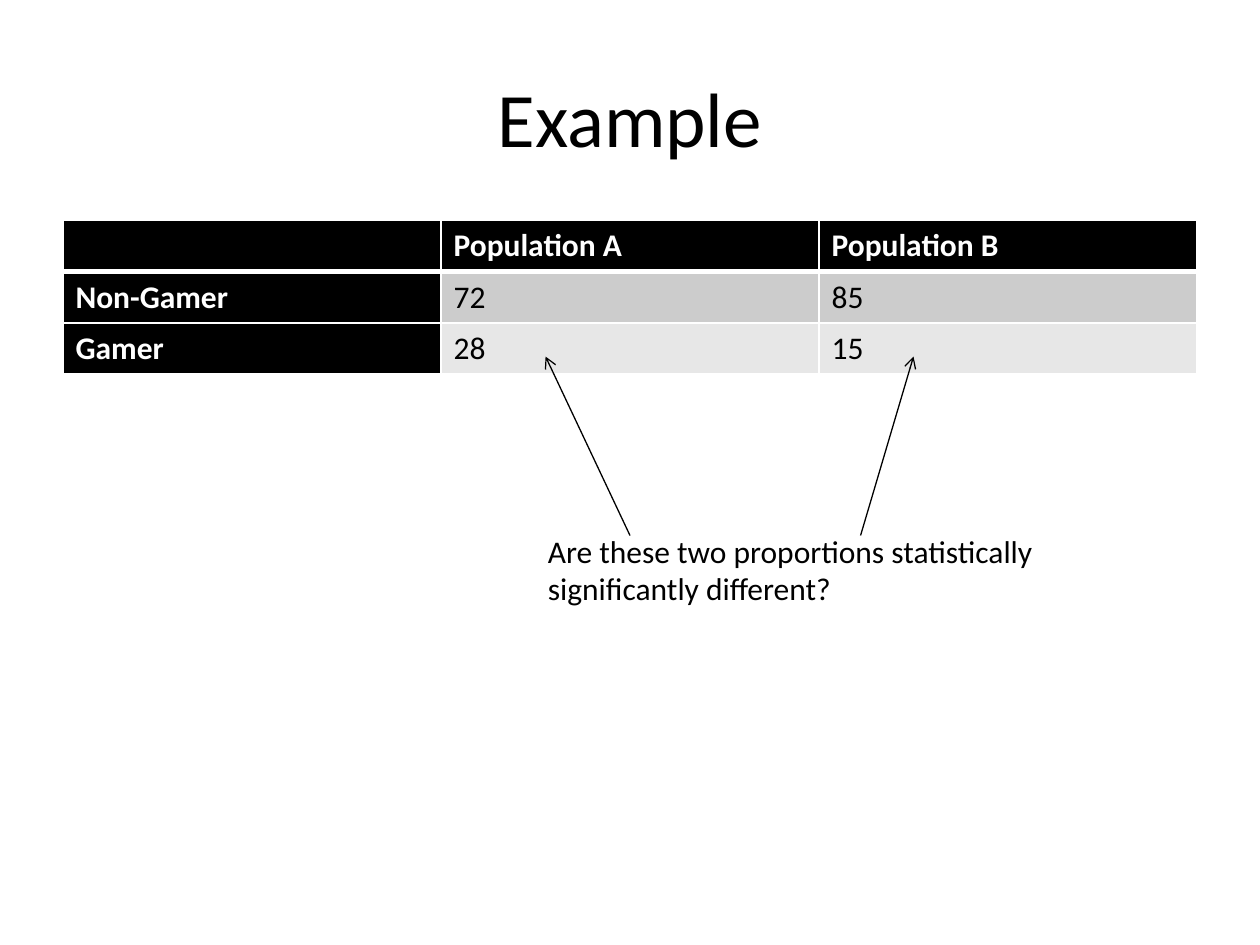
from lxml import etree
from pptx import Presentation
from pptx import util as u
from pptx.dml.color import RGBColor
from pptx.enum import shapes, text
from pptx.oxml import ns

BLACK = RGBColor(0x00, 0x00, 0x00)
WHITE = RGBColor(0xFF, 0xFF, 0xFF)
BAND_DARK = RGBColor(0xCC, 0xCC, 0xCC)
BAND_LIGHT = RGBColor(0xE7, 0xE7, 0xE7)


class SlideBuilder:
    """Holds the text style and the current slide."""

    font_name = "Calibri"
    body_size = 18
    title_size = 44

    def __init__(self, slide):
        self.slide = slide

    def style(self, para, size, color, bold=False):
        font = para.font
        font.name, font.size, font.bold = self.font_name, u.Pt(size), bold
        font.color.rgb = color

    def title(self, wording, left, top, width, height):
        box = self.slide.shapes.title
        box.left, box.top = u.Inches(left), u.Inches(top)
        box.width, box.height = u.Inches(width), u.Inches(height)
        frame = box.text_frame
        frame.text = wording
        frame.vertical_anchor = text.MSO_ANCHOR.MIDDLE
        para = frame.paragraphs[0]
        para.alignment = text.PP_ALIGN.CENTER
        self.style(para, self.title_size, BLACK)

    def borders(self, cell, bottom):
        properties = cell._tc.get_or_add_tcPr()
        widths = {"a:lnL": 1, "a:lnR": 1, "a:lnT": 1, "a:lnB": bottom}
        for index, (side, width) in enumerate(widths.items()):
            line = etree.Element(ns.qn(side), w=str(u.Pt(width)))
            fill = etree.SubElement(line, ns.qn("a:solidFill"))
            etree.SubElement(fill, ns.qn("a:srgbClr"), val=str(WHITE))
            properties.insert(index, line)

    def table(self, rows, left, top, width, height):
        frame = self.slide.shapes.add_table(
            len(rows), len(rows[0]), u.Inches(left), u.Inches(top),
            u.Inches(width), u.Inches(height))
        frame.table.first_col = True
        for r, row in enumerate(rows):
            for c, wording in enumerate(row):
                cell = frame.table.cell(r, c)
                heading = r == 0 or c == 0
                band = BAND_DARK if r % 2 else BAND_LIGHT
                cell.text = wording
                cell.fill.solid()
                cell.fill.fore_color.rgb = BLACK if heading else band
                self.style(cell.text_frame.paragraphs[0], self.body_size,
                           WHITE if heading else BLACK, bold=heading)
                self.borders(cell, bottom=3 if r == 0 else 1)

    def note(self, wording, left, top, width, height):
        box = self.slide.shapes.add_textbox(
            u.Inches(left), u.Inches(top), u.Inches(width), u.Inches(height))
        frame = box.text_frame
        frame.word_wrap = True
        frame.auto_size = text.MSO_AUTO_SIZE.SHAPE_TO_FIT_TEXT
        frame.text = wording
        self.style(frame.paragraphs[0], self.body_size, BLACK)

    def arrow(self, start, end):
        arrow = self.slide.shapes.add_connector(
            shapes.MSO_CONNECTOR.STRAIGHT, *map(u.Inches, start + end))
        arrow.line.color.rgb = BLACK
        arrow.line.width = u.Pt(0.75)
        etree.SubElement(arrow.line._get_or_add_ln(), ns.qn("a:tailEnd"),
                         type="arrow")
        etree.SubElement(arrow._element.spPr, ns.qn("a:effectLst"))


def main():
    deck = Presentation()
    deck.slide_width, deck.slide_height = u.Inches(10), u.Inches(7.5)
    page = SlideBuilder(deck.slides.add_slide(deck.slide_layouts[5]))

    # Title and table of counts
    page.title("Example", 0.5, 0.3, 9, 1.25)
    page.table([["", "Population A", "Population B"],
                ["Non-Gamer", "72", "85"],
                ["Gamer", "28", "15"]], 0.5, 1.75, 9, 1.22)

    # Question with arrows to the two gamer counts
    page.note("Are these two proportions statistically significantly "
              "different?", 4.25, 4.17, 4.17, 0.71)
    page.arrow((5, 4.25), (4.33, 2.83))
    page.arrow((6.83, 4.25), (7.25, 2.83))

    deck.save("out.pptx")


if __name__ == "__main__":
    main()
